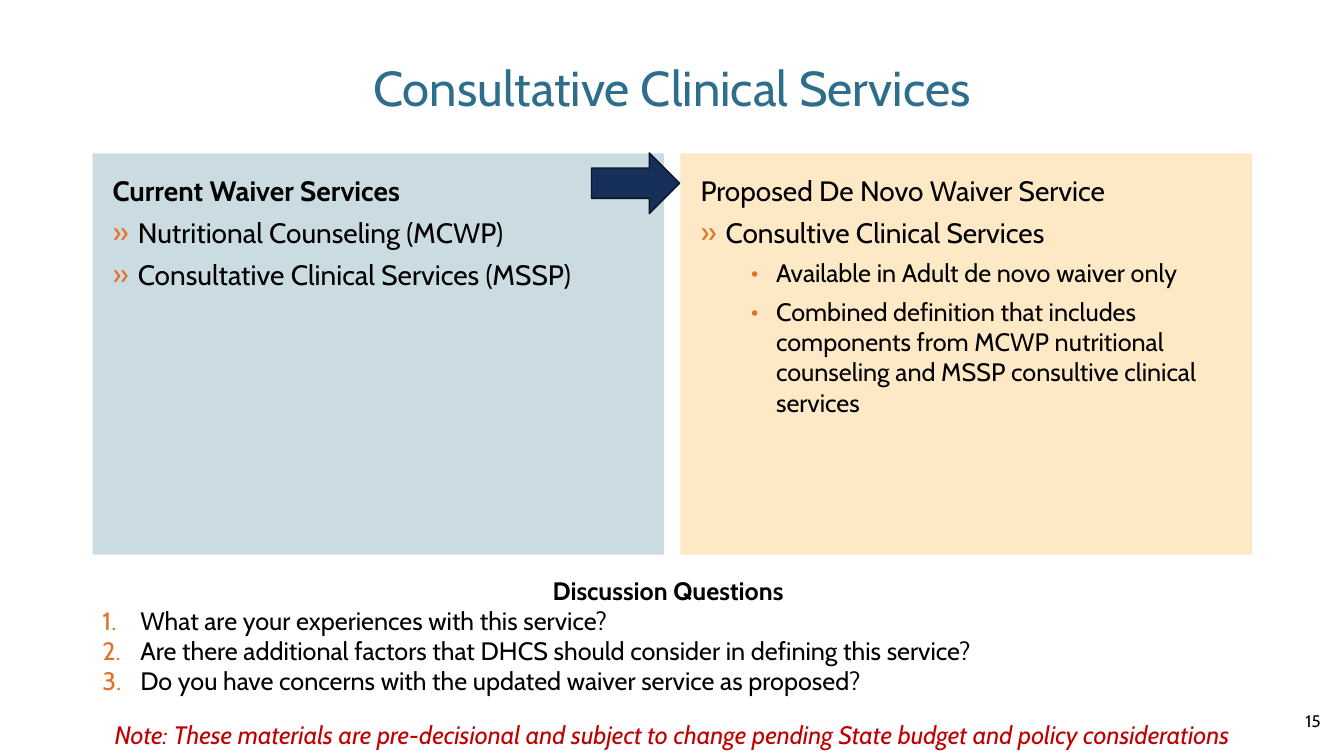
from lxml import etree
from pptx import Presentation
from pptx.dml.color import RGBColor
from pptx.enum import shapes, text
from pptx.oxml import ns
from pptx.util import Pt

FONT = "Cabin"
BLACK = RGBColor(0x00, 0x00, 0x00)
WHITE = RGBColor(0xFF, 0xFF, 0xFF)
TEAL = RGBColor(0x2D, 0x6E, 0x8D)
PALE_BLUE = RGBColor(0xCA, 0xDB, 0xE2)
PALE_YELLOW = RGBColor(0xFD, 0xE9, 0xC6)
NAVY = RGBColor(0x17, 0x30, 0x59)
DARK_NAVY = RGBColor(0x0A, 0x15, 0x27)
ORANGE = RGBColor(0xE3, 0x71, 0x24)
RED = RGBColor(0xC0, 0x00, 0x00)

MARGIN = 66.1
PANEL_WIDTH, PANEL_HEIGHT = 408.3, 286.6
PANEL_TOP, PANEL_GAP = 109.5, 11.6
NUMBERED = "arabicPeriod"


def add_bullet(para, mark, indent, hanging):
    """Give a paragraph an orange character or number with a hanging indent."""
    props = para._p.get_or_add_pPr()
    props.set("marL", str(Pt(indent)))
    props.set("indent", str(-Pt(hanging)))
    color = etree.SubElement(props, ns.qn("a:buClr"))
    etree.SubElement(color, ns.qn("a:srgbClr"), val=str(ORANGE))
    if mark == NUMBERED:
        etree.SubElement(props, ns.qn("a:buFont"), typeface="+mj-lt")
        etree.SubElement(props, ns.qn("a:buAutoNum"), type=mark)
    else:
        etree.SubElement(props, ns.qn("a:buFont"), typeface=FONT)
        etree.SubElement(props, ns.qn("a:buChar"), char=mark)


def add_text(frame, words, size=18, color=BLACK, bold=False, italic=False,
             align=text.PP_ALIGN.LEFT, after=0, mark=None, indent=18,
             hanging=18, level=0):
    """Write one paragraph, using the frame's empty first one if it is free."""
    first = frame.paragraphs[0]
    para = frame.add_paragraph() if first.runs else first
    para.alignment = align
    para.level = level
    para.space_before, para.space_after = Pt(0), Pt(after)
    if mark:
        add_bullet(para, mark, indent, hanging)
    span = para.add_run()
    span.text = words
    font = span.font
    font.name, font.size = FONT, Pt(size)
    font.bold, font.italic = bold, italic
    font.color.rgb = color


def add_shape(page, kind, box, fill, line=None):
    shape = page.shapes.add_shape(kind, *map(Pt, box))
    shape.shadow.inherit = False
    shape.fill.solid()
    shape.fill.fore_color.rgb = fill
    if line is None:
        shape.line.fill.background()
    else:
        shape.line.color.rgb = line
        shape.line.width = Pt(1)
    return shape


def add_label(page, box, words, anchor=text.MSO_ANCHOR.MIDDLE, **style):
    frame = page.shapes.add_textbox(*map(Pt, box)).text_frame
    frame.word_wrap = True
    frame.vertical_anchor = anchor
    add_text(frame, words, **style)


def add_panel(page, box, fill, heading, items, bold=False):
    """Coloured panel: a heading over (level, words) items."""
    frame = add_shape(page, shapes.MSO_SHAPE.RECTANGLE, box, fill).text_frame
    frame.word_wrap = True
    frame.vertical_anchor = text.MSO_ANCHOR.TOP
    frame.margin_left = frame.margin_right = frame.margin_top = Pt(14.4)
    add_text(frame, heading, size=20, bold=bold, after=6)
    for level, words in items:
        add_text(frame, words, size=20 - 2 * level, after=6, level=level,
                 mark="»•"[level], indent=18 + 36 * level)


def add_arrow(page, tip, top):
    """Arrow whose tip touches the left edge of the second panel."""
    width, height = 63, 43.4
    add_shape(page, shapes.MSO_SHAPE.RIGHT_ARROW,
              (tip - width, top, width, height), NAVY, DARK_NAVY)


def add_questions(page, box, heading, questions):
    frame = add_shape(page, shapes.MSO_SHAPE.RECTANGLE, box, WHITE).text_frame
    frame.word_wrap = True
    frame.vertical_anchor = text.MSO_ANCHOR.MIDDLE
    add_text(frame, heading, bold=True, align=text.PP_ALIGN.CENTER)
    for question in questions:
        add_text(frame, question, mark=NUMBERED, indent=27, hanging=27)


def build_slide(page):
    # Title
    add_label(page, (MARGIN, 28.8, 828, 66.2), "Consultative Clinical Services",
              size=35, color=TEAL, align=text.PP_ALIGN.CENTER)

    # Current and proposed services, joined by the arrow
    second_left = MARGIN + PANEL_WIDTH + PANEL_GAP
    add_panel(page, (MARGIN, PANEL_TOP, PANEL_WIDTH, PANEL_HEIGHT), PALE_BLUE,
              "Current Waiver Services",
              [(0, "Nutritional Counseling (MCWP)"),
               (0, "Consultative Clinical Services (MSSP)")], bold=True)
    add_panel(page, (second_left, PANEL_TOP, PANEL_WIDTH, PANEL_HEIGHT),
              PALE_YELLOW, "Proposed De Novo Waiver Service",
              [(0, "Consultive Clinical Services"),
               (1, "Available in Adult de novo waiver only"),
               (1, "Combined definition that includes components from MCWP "
                   "nutritional counseling and MSSP consultive clinical "
                   "services")])
    add_arrow(page, second_left - 0.5, PANEL_TOP - 0.3)

    # Discussion
    add_questions(page, (MARGIN, 407.5, 822.2, 92.9), "Discussion Questions",
                  ["What are your experiences with this service?",
                   "Are there additional factors that DHCS should consider in "
                   "defining this service?",
                   "Do you have concerns with the updated waiver service as "
                   "proposed?"])

    # Note and page number
    add_label(page, (10, 510.5, 940.3, 20.2),
              "Note: These materials are pre-decisional and subject to change "
              "pending State budget and policy considerations",
              anchor=text.MSO_ANCHOR.TOP, color=RED, italic=True,
              align=text.PP_ALIGN.CENTER)
    add_label(page, (734.4, 500.4, 216, 28.8), "15", size=12,
              align=text.PP_ALIGN.RIGHT)


def main():
    deck = Presentation()
    deck.slide_width, deck.slide_height = Pt(960), Pt(540)
    build_slide(deck.slides.add_slide(deck.slide_layouts[6]))
    deck.save("out.pptx")


if __name__ == "__main__":
    main()
